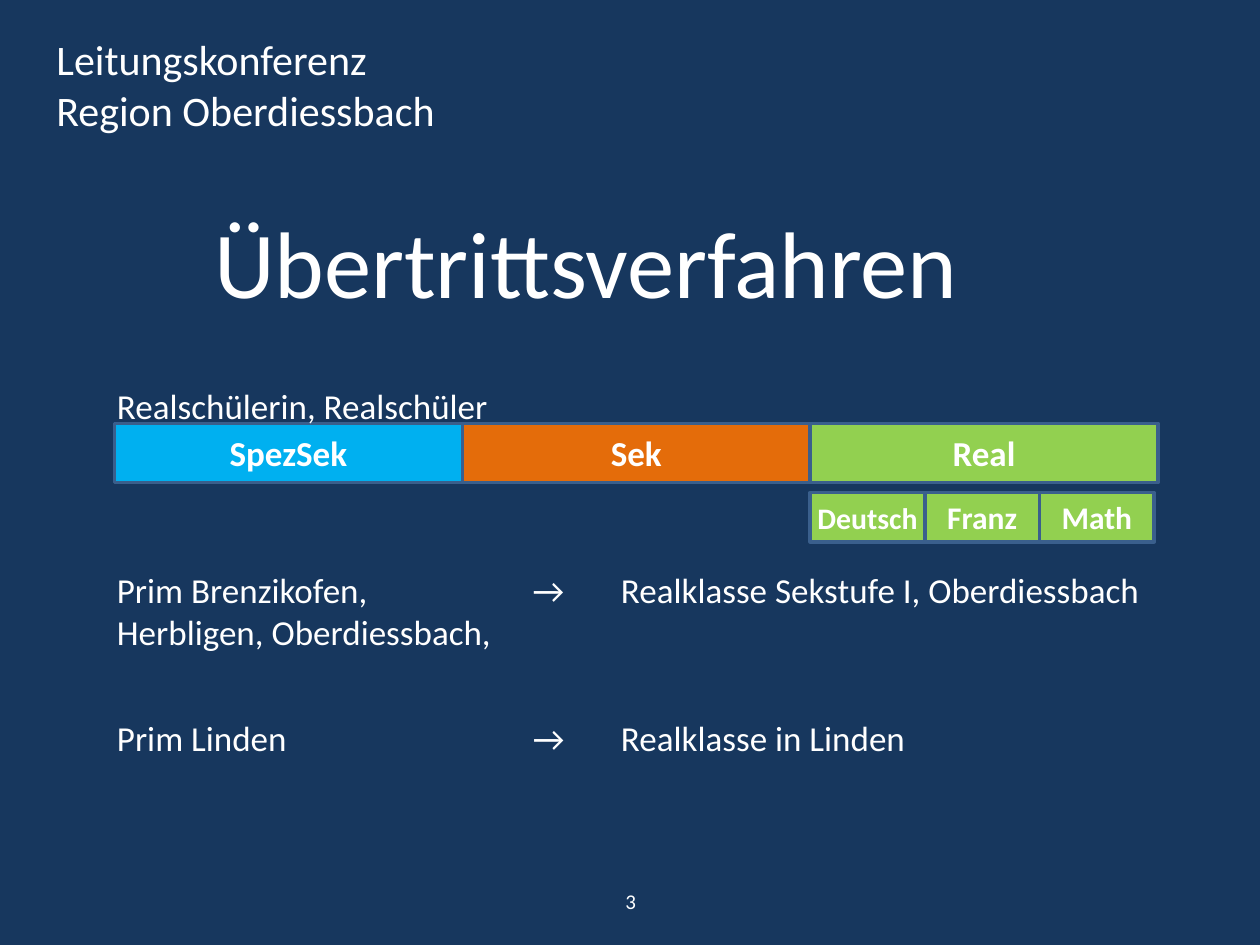
from dataclasses import dataclass

from lxml.etree import SubElement
from pptx import Presentation
from pptx.dml.color import RGBColor as Rgb
from pptx.enum.shapes import MSO_SHAPE as Shape
from pptx.enum.text import MSO_ANCHOR as Anchor, MSO_AUTO_SIZE as AutoSize, PP_ALIGN as Align
from pptx.oxml.ns import qn
from pptx.util import Inches, Pt


@dataclass(frozen=True)
class Theme:
    """Colours, font and type sizes of the deck."""
    font: str = "Calibri"
    background: str = "17375E"
    text: str = "FFFFFF"
    outline: str = "3A5F8C"
    blue: str = "00B0F0"
    orange: str = "E46C0A"
    green: str = "92D050"
    title: int = 54
    header: int = 24
    body: int = 20
    subject: int = 18
    tight: int = 17
    footer: int = 12


class SlideBuilder:
    """Adds styled elements to the current slide."""

    def __init__(self, deck, theme):
        """Start a blank slide with the theme background."""
        self.theme = theme
        self.slide = deck.slides.add_slide(deck.slide_layouts[6])
        fill = self.slide.background.fill
        fill.solid()
        fill.fore_color.rgb = Rgb.from_string(theme.background)

    def fill_frame(self, frame, lines, size, bold=False, align=Align.LEFT, tabs=(),
                   **frame_format):
        """Fill a text frame with formatted paragraphs."""
        for name, value in frame_format.items():
            setattr(frame, name, value)
        font_format = {"name": self.theme.font, "size": Pt(size), "bold": bold}
        for index, line in enumerate(lines):
            para = frame.add_paragraph() if index else frame.paragraphs[0]
            para.text = line
            para.alignment = align
            if tabs:
                stops = SubElement(para._p.get_or_add_pPr(), qn("a:tabLst"))
                for stop in tabs:
                    SubElement(stops, qn("a:tab"), pos=str(Inches(stop)), algn="l")
            for span in para.runs:
                for name, value in font_format.items():
                    setattr(span.font, name, value)
                span.font.color.rgb = Rgb.from_string(self.theme.text)

    def text(self, place, lines, size, **options):
        """Add a text box."""
        box = self.slide.shapes.add_textbox(*map(Inches, place))
        self.fill_frame(box.text_frame, lines, size, **{"word_wrap": True, **options})

    def bar(self, place, label, color, size, **options):
        """Add an outlined rectangle with a centred bold label."""
        box = self.slide.shapes.add_shape(Shape.RECTANGLE, *map(Inches, place))
        box.shadow.inherit = False
        box.fill.solid()
        box.fill.fore_color.rgb = Rgb.from_string(color)
        box.line.color.rgb = Rgb.from_string(self.theme.outline)
        box.line.width = Pt(2)
        self.fill_frame(box.text_frame, [label], size, bold=True, align=Align.CENTER,
                        vertical_anchor=Anchor.MIDDLE, **options)


def main():
    """Build the transfer procedure slide."""
    deck = Presentation()
    deck.slide_width, deck.slide_height = Inches(10), Inches(7.5)
    theme = Theme()
    page = SlideBuilder(deck, theme)
    grow = {"auto_size": AutoSize.SHAPE_TO_FIT_TEXT}

    page.text((0.35, 0.22, 3.36, 0.91), ["Leitungskonferenz", "Region Oberdiessbach"],
              theme.header, word_wrap=False, **grow)
    page.text((1.6, 1.57, 6.19, 1.01), ["Übertrittsverfahren"], theme.title,
              word_wrap=False, **grow)
    page.text((3.42, 6.95, 3.17, 0.4), ["3"], theme.footer, align=Align.CENTER,
              vertical_anchor=Anchor.MIDDLE)

    left, level_width, subject_width = 0.91, 2.76, 0.91
    levels = [("SpezSek", theme.blue), ("Sek", theme.orange), ("Real", theme.green)]
    for column, (label, color) in enumerate(levels):
        page.bar((left + column * level_width, 3.36, level_width, 0.47), label, color, theme.body)

    narrow = {"margin_left": Inches(0.04), "margin_right": Inches(0.04)}
    subjects = [("Deutsch", theme.tight, narrow), ("Franz", theme.subject, {}),
                ("Math", theme.subject, {})]
    for column, (label, size, margins) in enumerate(subjects):
        page.bar((left + 2 * level_width + column * subject_width, 3.91, subject_width, 0.39),
                 label, theme.green, size, **margins)

    page.text((0.83, 3, 3.24, 0.44), ["Realschülerin, Realschüler"], theme.body, **grow)
    routes = [
        (4.46, 8.74, "Prim Brenzikofen,\t→\tRealklasse Sekstufe I, Oberdiessbach"
                     "\vHerbligen, Oberdiessbach,"),
        (5.64, 8.35, "Prim Linden\t→\tRealklasse in Linden"),
    ]
    for top, width, route in routes:
        page.text((0.83, top, width, 0.77), [route], theme.body, tabs=(3.3, 4))

    deck.save("out.pptx")


if __name__ == "__main__":
    main()
